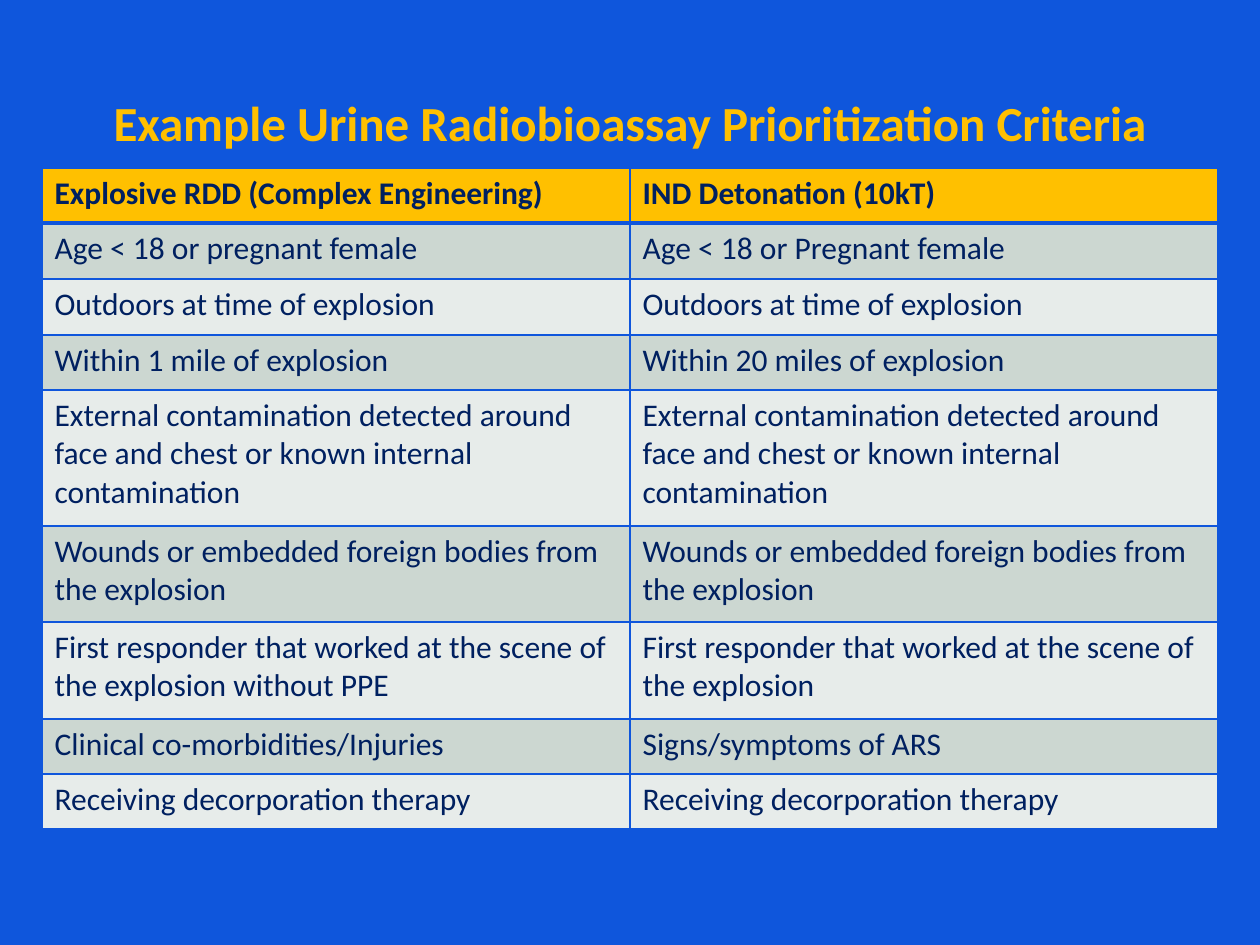
import pptx
import pptx.dml.color
import pptx.enum.text
import pptx.oxml.ns
import pptx.util
from lxml import etree

PX = 914400 / 126
BLUE = pptx.dml.color.RGBColor(0x0F, 0x56, 0xDC)
GOLD = pptx.dml.color.RGBColor(0xFF, 0xC0, 0x00)
NAVY = pptx.dml.color.RGBColor(0x00, 0x20, 0x60)
DARK_BAND = pptx.dml.color.RGBColor(0xCC, 0xD7, 0xD1)
LIGHT_BAND = pptx.dml.color.RGBColor(0xE7, 0xEC, 0xEA)

EXTERNAL = "External contamination detected around face and chest or known internal contamination"
WOUNDS = "Wounds or embedded foreign bodies from the explosion"
RESPONDER = "First responder that worked at the scene of the explosion"
CRITERIA = [
    (55, "Explosive RDD (Complex Engineering)", "IND Detonation (10kT)"),
    (56, "Age < 18 or pregnant female", "Age < 18 or Pregnant female"),
    (56, "Outdoors at time of explosion", "Outdoors at time of explosion"),
    (55, "Within 1 mile of explosion", "Within 20 miles of explosion"),
    (136, EXTERNAL, EXTERNAL),
    (96, WOUNDS, WOUNDS),
    (97, f"{RESPONDER} without PPE", RESPONDER),
    (55, "Clinical co-morbidities/Injuries", "Signs/symptoms of ARS"),
    (55, "Receiving decorporation therapy", "Receiving decorporation therapy"),
]


def px(length):
    return pptx.util.Emu(round(length * PX))


def write_text(frame, text, size=18, color=NAVY, bold=False, align=None, spacing=None):
    paragraph = frame.paragraphs[0]
    paragraph.alignment = align
    paragraph.line_spacing = spacing
    run = paragraph.add_run()
    run.text = text
    run.font.name = "Calibri"
    run.font.size = pptx.util.Pt(size)
    run.font.bold = bold
    run.font.color.rgb = color


def set_borders(cell, color, **widths):
    properties = cell._tc.get_or_add_tcPr()
    for side, width in widths.items():
        line = etree.SubElement(properties, pptx.oxml.ns.qn(f"a:ln{side}"), w=str(pptx.util.Pt(width)))
        fill = etree.SubElement(line, pptx.oxml.ns.qn("a:solidFill"))
        etree.SubElement(fill, pptx.oxml.ns.qn("a:srgbClr"), val=str(color))


def place_heading(slide, left, top, width, height):
    heading = slide.shapes.title
    heading.left, heading.top = px(left), px(top)
    heading.width, heading.height = px(width), px(height)
    frame = heading.text_frame
    frame.word_wrap = True
    frame.auto_size = pptx.enum.text.MSO_AUTO_SIZE.NONE
    frame.vertical_anchor = pptx.enum.text.MSO_ANCHOR.BOTTOM
    write_text(frame, "Example Urine Radiobioassay Prioritization Criteria", size=28,
               color=GOLD, bold=True, align=pptx.enum.text.PP_ALIGN.CENTER,
               spacing=pptx.util.Pt(30))


def place_criteria(slide, left, top, width):
    height = sum(row[0] for row in CRITERIA)
    criteria = slide.shapes.add_table(
        len(CRITERIA), 2, px(left), px(top), px(width), px(height)).table
    for column in criteria.columns:
        column.width = px(width / 2)
    for index, (row_height, *scenarios) in enumerate(CRITERIA):
        criteria.rows[index].height = px(row_height)
        header = index == 0
        band = GOLD if header else DARK_BAND if index % 2 else LIGHT_BAND
        for cell, criterion in zip(criteria.rows[index].cells, scenarios):
            set_borders(cell, BLUE, L=1, R=1, T=3 if index == 1 else 1, B=3 if header else 1)
            cell.fill.solid()
            cell.fill.fore_color.rgb = band
            write_text(cell.text_frame, criterion, bold=header)


def main():
    presentation = pptx.Presentation()
    presentation.slide_width, presentation.slide_height = px(1260), px(945)
    slide = presentation.slides.add_slide(presentation.slide_layouts[5])
    slide.background.fill.solid()
    slide.background.fill.fore_color.rgb = BLUE
    place_heading(slide, 32, 0, 1196, 158)
    place_criteria(slide, 42, 168, 1176)
    presentation.save("out.pptx")


if __name__ == "__main__":
    main()
